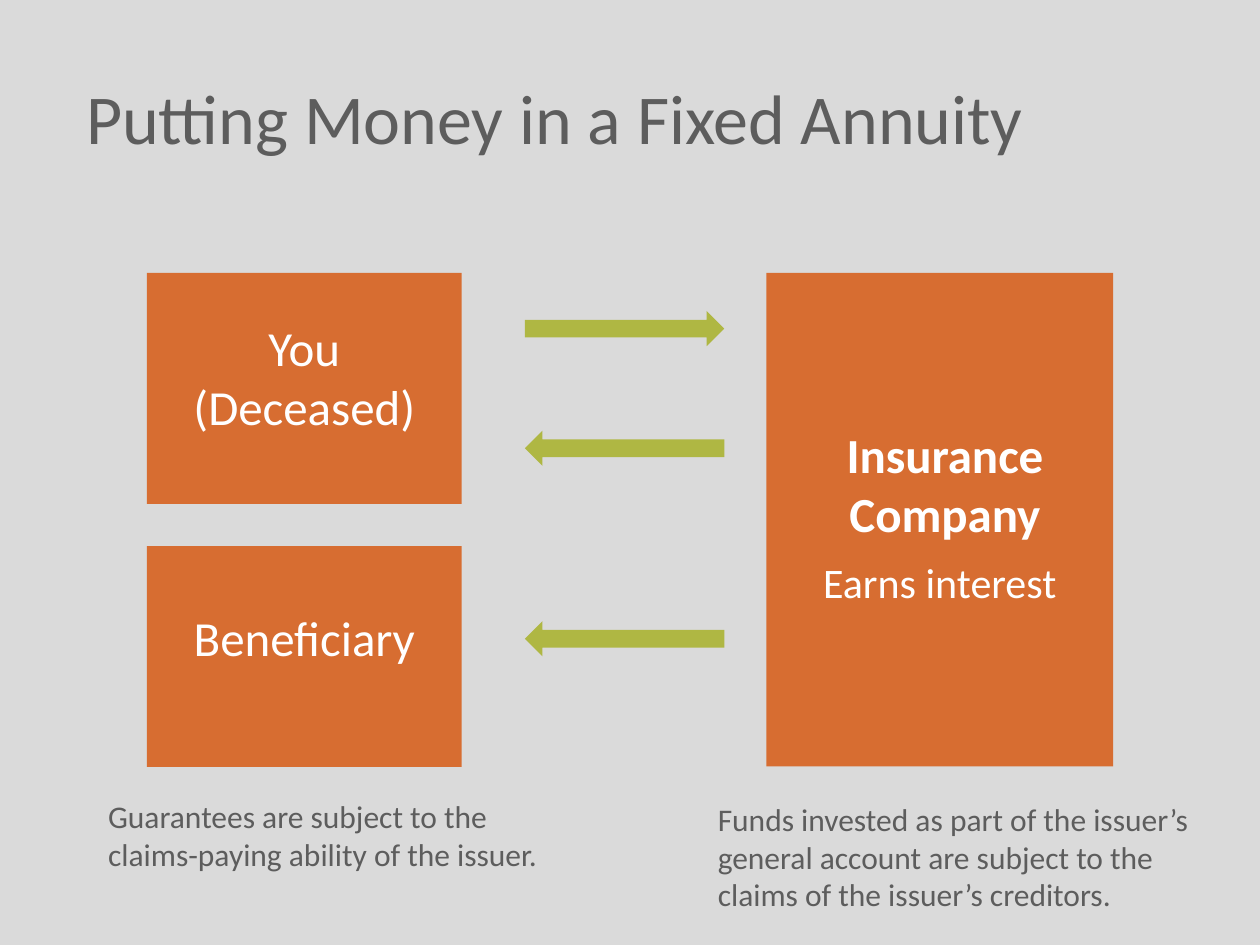
from pptx import Presentation
from pptx.dml.color import RGBColor
from pptx.enum.shapes import MSO_SHAPE
from pptx.enum.text import MSO_ANCHOR, PP_ALIGN
from pptx.util import Cm, Pt

# Content: boxes are (left, top, width, height) in cm
TITLE = "Putting Money in a Fixed Annuity"
TITLE_BOX = (1.48, 1.48, 19.84, 1.75)

# Each party: panel box, label, label box, bold
PARTIES = [
    ((15.45, 5.5, 6.99, 9.95), "Insurance Company", (16.3, 8.43, 5.5, 2.64), True),
    ((2.96, 11.01, 6.35, 4.45), "Beneficiary", (3.2, 12.12, 5.87, 1.45), False),
    ((2.96, 5.5, 6.35, 4.66), "You (Deceased)", (3.2, 6.27, 5.87, 2.64), False),
]

# Each payment: top, rotation (180 points away from the company)
PAYMENTS = [(6.27, 0), (8.68, 180), (12.52, 180)]
ARROW_LEFT, ARROW_WIDTH, ARROW_HEIGHT = 10.58, 4.02, 0.71

ORANGE, GREEN, GREY, WHITE = "D76D31", "AFB743", "5D5D5D", "FFFFFF"
BACKGROUND = "DADADA"

# Each note: text, box, size, colour, alignment
NOTES = [
    ("Funds invested as part of the issuer’s general account are subject to "
     "the claims of the issuer’s creditors.",
     (14.22, 16.0, 10.54, 2.54), 18, GREY, PP_ALIGN.LEFT),
    ("Guarantees are subject to the claims-paying ability of the issuer.",
     (1.93, 15.95, 9.27, 1.8), 18, GREY, PP_ALIGN.LEFT),
    ("Earns interest", (15.67, 11.1, 6.55, 1.27), 24, WHITE, PP_ALIGN.CENTER),
]


def paint(fill, colour):
    fill.solid()
    fill.fore_color.rgb = RGBColor.from_string(colour)


def place(box):
    return [Cm(length) for length in box]


def add_block(shapes, preset, box, colour):
    block = shapes.add_shape(preset, *place(box))
    block.shadow.inherit = False
    paint(block.fill, colour)
    block.line.fill.background()
    return block


def write(frame, text, size, colour, align, anchor=MSO_ANCHOR.TOP, bold=False):
    frame.word_wrap = True
    frame.vertical_anchor = anchor
    paragraph = frame.paragraphs[0]
    paragraph.text = text
    paragraph.alignment = align
    font = paragraph.font
    font.name, font.size, font.bold = "Calibri", Pt(size), bold
    font.color.rgb = RGBColor.from_string(colour)


def main():
    deck = Presentation()
    deck.slide_width, deck.slide_height = Cm(25.4), Cm(19.05)
    slide = deck.slides.add_slide(deck.slide_layouts[5])
    paint(slide.background.fill, BACKGROUND)

    # Title
    title = slide.shapes.title
    title.left, title.top, title.width, title.height = place(TITLE_BOX)
    write(title.text_frame, TITLE, 40, GREY, PP_ALIGN.LEFT, MSO_ANCHOR.MIDDLE)

    # Parties, each a panel grouped with its label
    for panel_box, name, label_box, bold in PARTIES:
        party = slide.shapes.add_group_shape()
        add_block(party.shapes, MSO_SHAPE.RECTANGLE, panel_box, ORANGE)
        label = add_block(party.shapes, MSO_SHAPE.RECTANGLE, label_box, ORANGE)
        write(label.text_frame, name, 28, WHITE, PP_ALIGN.CENTER, bold=bold)

    # Payments between the parties
    for top, rotation in PAYMENTS:
        arrow = add_block(slide.shapes, MSO_SHAPE.RIGHT_ARROW,
                          (ARROW_LEFT, top, ARROW_WIDTH, ARROW_HEIGHT), GREEN)
        arrow.rotation = rotation

    # Notes
    for text, box, size, colour, align in NOTES:
        note = slide.shapes.add_textbox(*place(box))
        write(note.text_frame, text, size, colour, align)

    deck.save("out.pptx")


if __name__ == "__main__":
    main()
